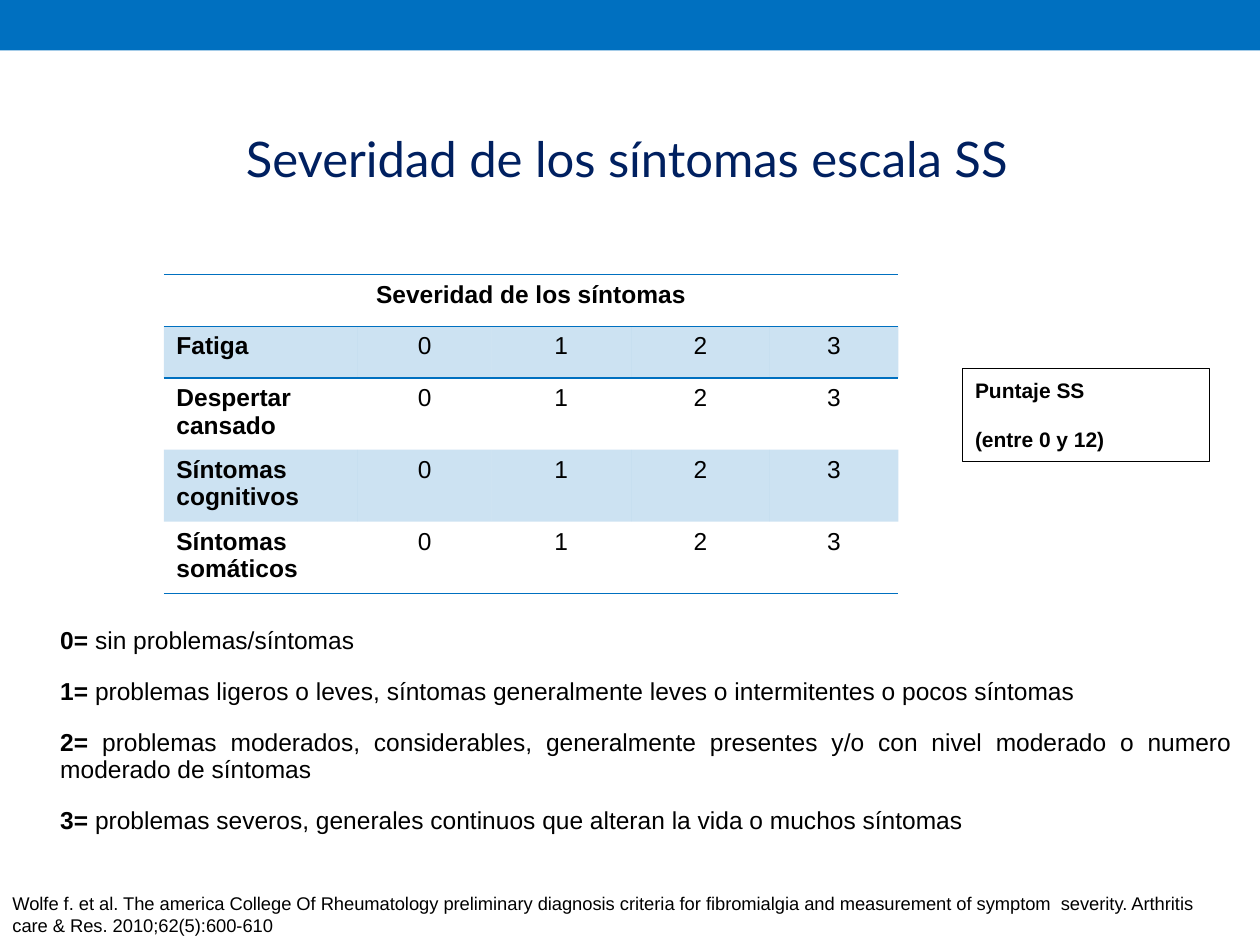
from pptx import Presentation
from pptx.dml.color import RGBColor
from pptx.enum.shapes import MSO_SHAPE
from pptx.enum.text import PP_ALIGN
from pptx.oxml import parse_xml
from pptx.oxml.ns import nsdecls, qn
from pptx.util import Inches, Pt

# Content
TITLE = "Severidad de los síntomas escala SS"
TABLE_HEAD = "Severidad de los síntomas"
SYMPTOMS = ["Fatiga", "Despertar cansado", "Síntomas cognitivos", "Síntomas somáticos"]
SCORES = ["0", "1", "2", "3"]
LEGEND = [
    ("0=", " sin problemas/síntomas"),
    ("1=", " problemas ligeros o leves, síntomas generalmente leves o intermitentes o pocos síntomas"),
    ("2=", " problemas moderados, considerables, generalmente presentes y/o con nivel moderado "
           "o numero moderado de síntomas"),
    ("3=", " problemas severos, generales continuos que alteran la vida o muchos síntomas"),
]
SCORE_BOX = ["Puntaje SS", "(entre 0 y 12)"]
SOURCE = ("Wolfe f. et al. The america College Of Rheumatology preliminary diagnosis criteria "
          "for fibromialgia and measurement of symptom  severity. Arthritis care & Res. "
          "2010;62(5):600-610")

THEME = {
    "blue": "0070C0", "navy": "002060", "black": "000000", "white": "FFFFFF",
    "title_font": "Lato", "font": "Arial",
    "title": 28, "body": 14, "box": 12, "source": 10.5,
    "band_alpha": 20, "rule": 1,
}
COL_WIDTHS = [1.54, 1.06, 1.11, 1.1, 1.02]
ROW_HEIGHTS = [0.41, 0.41, 0.57, 0.57, 0.57]
NO_STYLE = "{2D5ABB26-0587-4C30-8999-92F81FD0307C}"


def rgb(name):
    return RGBColor.from_string(THEME[name])


def write(tf, paragraphs, size="body", font="font", color="black", bold=False,
          align=PP_ALIGN.LEFT, before=0, after=0, spacing=None, indent=0):
    """Fill a frame; a paragraph is a string or a (bold, plain) pair."""
    tf.word_wrap = True
    for i, item in enumerate(paragraphs):
        p = tf.paragraphs[0] if i == 0 else tf.add_paragraph()
        p.alignment = align
        p.space_before, p.space_after = Pt(before), Pt(after)
        if spacing:
            p.line_spacing = spacing
        if indent:
            p._p.get_or_add_pPr().set("marL", str(Inches(indent)))
        runs = [(item, bold)] if isinstance(item, str) else zip(item, (True, False))
        for text, is_bold in runs:
            r = p.add_run()
            r.text = text
            r.font.name, r.font.size = THEME[font], Pt(THEME[size])
            r.font.bold, r.font.color.rgb = is_bold, rgb(color)


def add_text(s, box, paragraphs, **fmt):
    sp = s.shapes.add_textbox(*map(Inches, box))
    write(sp.text_frame, paragraphs, **fmt)


def add_rect(s, box, fill, line=None):
    sp = s.shapes.add_shape(MSO_SHAPE.RECTANGLE, *map(Inches, box))
    sp.shadow.inherit = False
    sp.fill.solid()
    sp.fill.fore_color.rgb = rgb(fill)
    if line:
        sp.line.color.rgb, sp.line.width = rgb(line), Pt(0.25)
    else:
        sp.line.fill.background()
    return sp


def format_cell(cell, sides, banded):
    tcPr = cell._tc.get_or_add_tcPr()
    for side in sides:
        tcPr.append(parse_xml(
            f'<a:{side} {nsdecls("a")} w="{Pt(THEME["rule"])}"><a:solidFill>'
            f'<a:srgbClr val="{THEME["blue"]}"/></a:solidFill></a:{side}>'))
    if banded:
        cell.fill.solid()
        cell.fill.fore_color.rgb = rgb("blue")
        clr = tcPr.find(qn("a:solidFill")).find(qn("a:srgbClr"))
        clr.append(parse_xml(f'<a:alpha {nsdecls("a")} val="{THEME["band_alpha"] * 1000}"/>'))
    else:
        cell.fill.background()


def add_symptom_table(s, left, top):
    rows = [[TABLE_HEAD] + [""] * len(SCORES)] + [[name] + SCORES for name in SYMPTOMS]
    box = (left, top, sum(COL_WIDTHS), sum(ROW_HEIGHTS))
    table = s.shapes.add_table(len(rows), len(COL_WIDTHS), *map(Inches, box)).table
    table._tbl.tblPr.find(qn("a:tableStyleId")).text = NO_STYLE
    for col, width in zip(table.columns, COL_WIDTHS):
        col.width = Inches(width)
    for row, height in zip(table.rows, ROW_HEIGHTS):
        row.height = Inches(height)
    table.cell(0, 0).merge(table.cell(0, len(SCORES)))
    borders = {0: ("lnT", "lnB"), 1: ("lnT",), len(rows) - 1: ("lnB",)}
    for i, row in enumerate(rows):
        for j, text in enumerate(row):
            cell = table.cell(i, j)
            format_cell(cell, borders.get(i, ()), banded=i % 2 == 1)
            if text:
                write(cell.text_frame, [text], bold=j == 0,
                      align=PP_ALIGN.CENTER if i == 0 or j else PP_ALIGN.LEFT)


prs = Presentation()
prs.slide_width, prs.slide_height = Inches(10), Inches(7.5)
s = prs.slides.add_slide(prs.slide_layouts[6])

# Top band and title
add_rect(s, (0, 0, 10, 0.4), "blue")
add_text(s, (1.61, 0.97, 6.73, 0.57), [TITLE], size="title", font="title_font",
         color="navy", align=PP_ALIGN.CENTER)

# Symptom table
add_symptom_table(s, 1.3, 2.18)

# Meaning of each score
add_text(s, (0.28, 4.94, 9.6, 1.73), LEGEND, align=PP_ALIGN.JUSTIFY,
         before=12, after=2, spacing=0.9, indent=0.1)

# Total score box
sp = add_rect(s, (7.64, 2.92, 1.96, 0.74), "white", line="black")
write(sp.text_frame, SCORE_BOX, size="box", bold=True, before=12, after=2)

# Source
add_text(s, (0, 7.03, 9.71, 0.47), [SOURCE], size="source")

prs.save("out.pptx")
